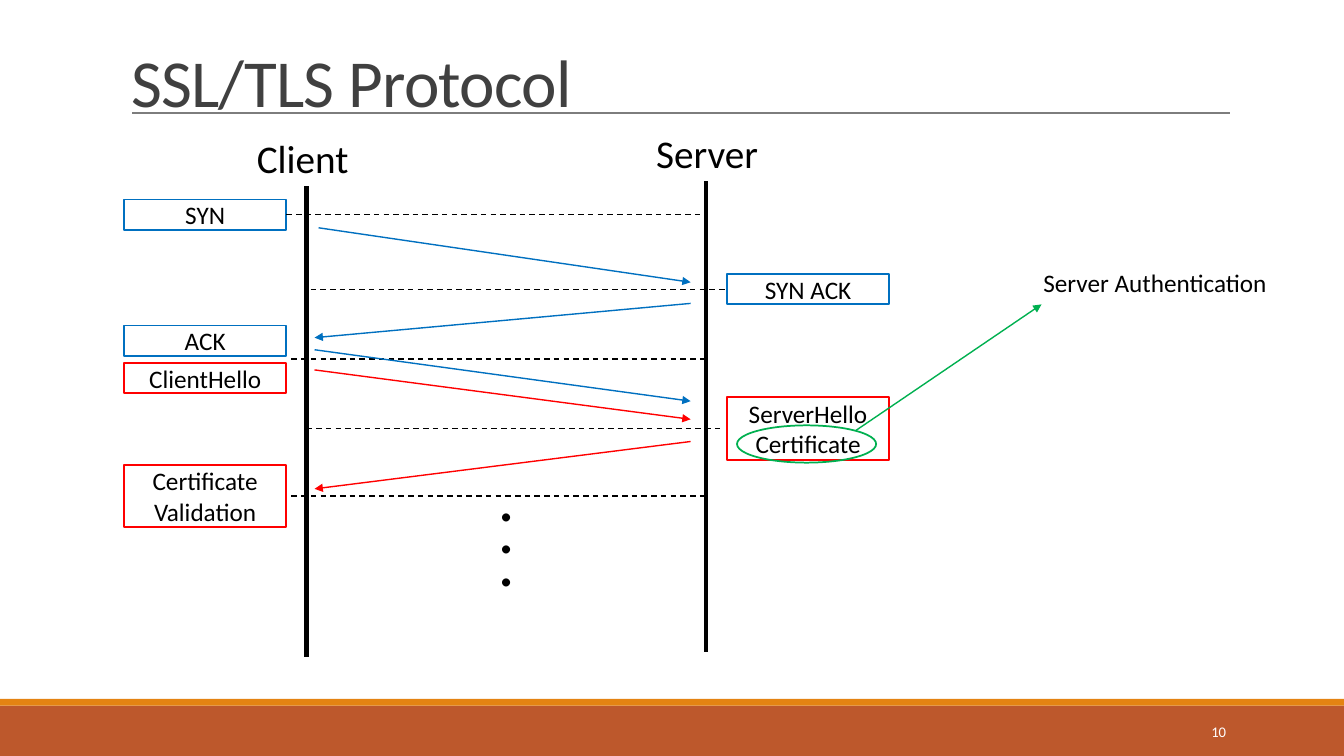
from lxml.etree import SubElement
from pptx import Presentation
from pptx.dml.color import RGBColor as Rgb
from pptx.enum.dml import MSO_LINE as Dash
from pptx.enum.shapes import MSO_CONNECTOR as Wire, MSO_SHAPE as Preset
from pptx.enum.text import MSO_ANCHOR as Anchor, MSO_AUTO_SIZE as Fit, PP_ALIGN as Align
from pptx.oxml.ns import qn
from pptx.util import Inches, Pt

COLORS = {"black": "000000", "white": "FFFFFF", "title": "404040", "rule": "7D7D7D",
          "rust": "BD582C", "orange": "E48312",
          "tcp": "0070C0", "tls": "FF0000", "auth": "00B050"}
COLORS = {name: Rgb.from_string(value) for name, value in COLORS.items()}

deck = Presentation()
deck.slide_width, deck.slide_height = Inches(13.33), Inches(7.5)
CELL = deck.slide_height / 22.5
slide = deck.slides.add_slide(deck.slide_layouts[5])
shapes = slide.shapes


def grid(*cells):
    return [round(cell * CELL) for cell in cells]


def write(holder, text, size=18, color="black", align=Align.LEFT, anchor=Anchor.TOP,
          leading=None, tracking=None):
    frame = holder.text_frame
    frame.text = text
    frame.word_wrap = True
    frame.auto_size = Fit.NONE
    frame.vertical_anchor = anchor
    for paragraph in frame.paragraphs:
        paragraph.alignment = align
        paragraph.line_spacing = leading
        for run in paragraph.runs:
            run.font.name = "Calibri"
            run.font.size = Pt(size)
            run.font.color.rgb = COLORS[color]
            if tracking:
                run.font._element.set("spc", str(tracking))


for top, height, color in [(21, 1.5, "rust"), (20.8, 0.2, "orange")]:
    band = shapes.add_shape(Preset.RECTANGLE, *grid(0, top, 40, height))
    band.shadow.inherit = False
    band.fill.solid()
    band.fill.fore_color.rgb = COLORS[color]
    band.line.fill.background()

title = shapes.title
title.left, title.top, title.width, title.height = grid(3.6, 0.93, 33, 2.82)
write(title, "SSL/TLS Protocol", size=48, color="title", anchor=Anchor.BOTTOM,
      leading=0.85, tracking=-50)

client_x, server_x = 9.12, 21
lifelines = []
for party, x, top in [("Client", client_x, 5.55), ("Server", server_x, 5.4)]:
    write(shapes.add_textbox(*grid(x - 1.77, top - 1.71, 6.9, 1.71)), party, size=28)
    lifelines.append((x, top, x, top + 14, "black", 3, None, False))

client_box, server_box = 3.69, 21.63
messages = {}
for text, left, top, color in [
    ("SYN", client_box, 5.94, "tcp"),
    ("SYN ACK", server_box, 8.16, "tcp"),
    ("ACK", client_box, 9.69, "tcp"),
    ("ClientHello", client_box, 10.8, "tls"),
    ("ServerHello\nCertificate", server_box, 11.82, "tls"),
    ("Certificate\nValidation", client_box, 13.83, "tls"),
    ("", 21.93, 12.66, "auth"),
]:
    if text:
        preset, width, height = Preset.RECTANGLE, 4.83, 1.86 if "\n" in text else 0.9
    else:
        preset, width, height = Preset.OVAL, 4.14, 1.11
    message = shapes.add_shape(preset, *grid(left, top, width, height))
    message.shadow.inherit = False
    message.fill.background()
    message.line.color.rgb = COLORS[color]
    message.line.width = Pt(1.25)
    if text:
        write(message, text, align=Align.CENTER, anchor=Anchor.MIDDLE)
        messages[text] = message

step_span = 12.36
steps = [(x, y, x + step_span, y, "black", 1, Dash.DASH, False)
         for x, y in [(8.52, 6.39), (9.24, 8.61), (8.67, 10.68), (9.12, 12.75), (8.67, 14.76)]]

client_tip, server_tip = 9.36, 20.55
flights = [(*ends, color, 1, None, True) for *ends, color in [
    (9.48, 6.78, server_tip, 8.4, "tcp"),
    (server_tip, 9.03, client_tip, 10.05, "tcp"),
    (client_tip, 10.41, server_tip, 11.94, "tcp"),
    (client_tip, 11.01, server_tip, 12.48, "tls"),
    (server_tip, 13.14, client_tip, 14.55, "tls"),
    (25.47, 12.81, 30.99, 9.06, "auth"),
]]

title_rule = (3.93, 3.36, 36.6, 3.36, "rule", 1, None, False)
drawn = []
for *ends, color, weight, dash, arrow in [title_rule, *lifelines, *steps, *flights]:
    wire = shapes.add_connector(Wire.STRAIGHT, *grid(*ends))
    wire.line.color.rgb = COLORS[color]
    wire.line.width = Pt(weight)
    if dash:
        wire.line.dash_style = dash
    properties = wire._element.spPr
    if arrow:
        SubElement(properties.find(qn("a:ln")), qn("a:tailEnd"), type="triangle")
    SubElement(properties, qn("a:effectLst"))
    drawn.append(wire)

syn_step, syn_ack_step = drawn[3:5]
syn_step.begin_connect(messages["SYN"], 3)
syn_ack_step.end_connect(messages["SYN ACK"], 1)

write(shapes.add_textbox(*grid(30.75, 7.8, 7.77, 1.2)), "Server Authentication")

continuation = shapes.add_textbox(*grid(14.07, 14.88, 3.03, 4.41))
write(continuation, ". . .", size=48, align=Align.CENTER)
continuation.text_frame._txBody.bodyPr.set("vert", "eaVert")

write(shapes.add_textbox(*grid(32.49, 21.18, 4.29, 1.2)), "10", size=10.5, color="white",
      align=Align.RIGHT, anchor=Anchor.MIDDLE)

deck.save("out.pptx")
